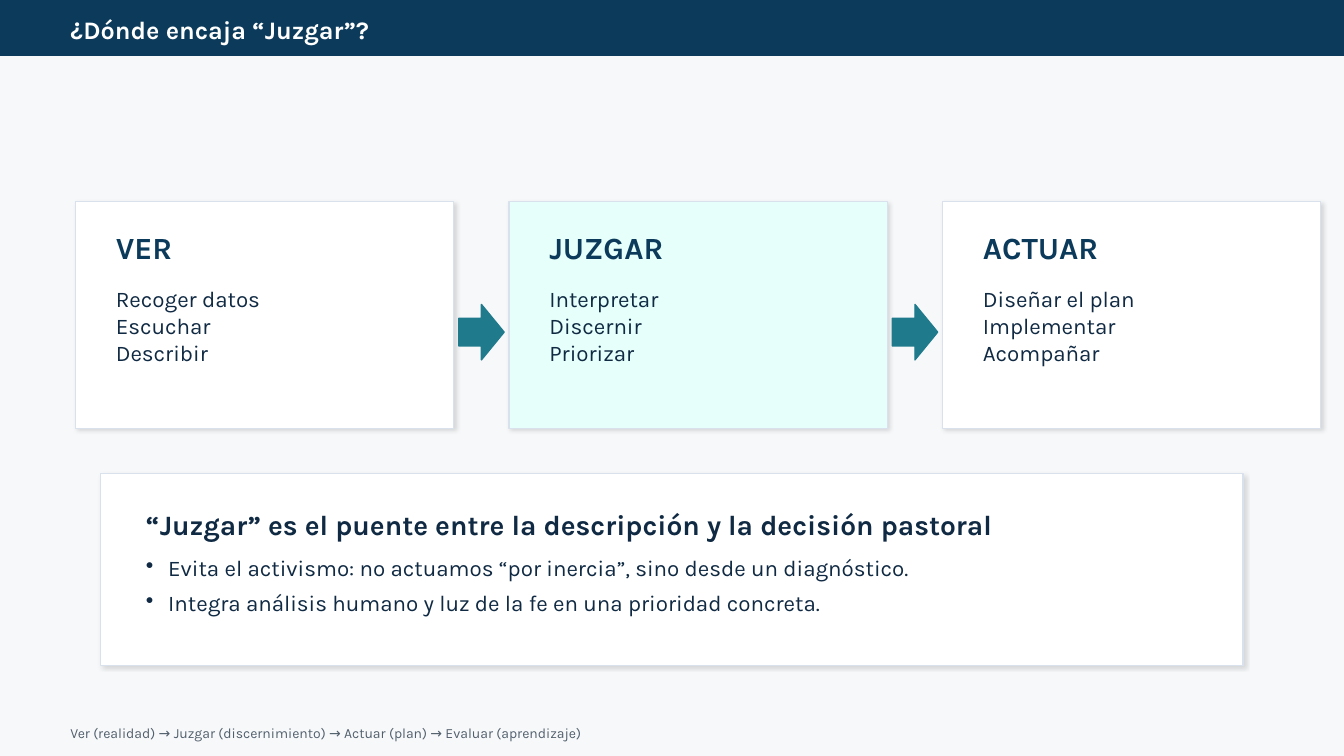
from lxml.etree import SubElement
from pptx import Presentation
from pptx.dml.color import RGBColor
from pptx.enum.shapes import MSO_SHAPE
from pptx.enum.text import MSO_ANCHOR
from pptx.oxml.ns import qn
from pptx.util import Inches, Pt

NAVY, INK, TEAL = "0B3A5B", "102A43", "1F7A8C"
WHITE, MINT, EDGE = "FFFFFF", "E6FFFA", "D9E2EC"

deck = Presentation()
deck.slide_width, deck.slide_height = Inches(13.33), Inches(7.5)
slide = deck.slides.add_slide(deck.slide_layouts[6])
slide.background.fill.solid()
slide.background.fill.fore_color.rgb = RGBColor.from_string("F7F8FA")


def draw(kind, area, fill, edge, shade=False):
    shape = slide.shapes.add_shape(kind, *map(Inches, area))
    shape.fill.solid()
    shape.fill.fore_color.rgb = RGBColor.from_string(fill)
    shape.line.color.rgb = RGBColor.from_string(edge)
    shape.line.width = Pt(1)
    shape.shadow.inherit = False
    if shade:
        glow = SubElement(shape._element.spPr.find(qn("a:effectLst")), qn("a:outerShdw"),
                          blurRad=str(Pt(3)), dist=str(Pt(1.5)), dir=str(45 * 60000),
                          algn="ctr", rotWithShape="0")
        tone = SubElement(glow, qn("a:srgbClr"), val="000000")
        SubElement(tone, qn("a:alpha"), val="12000")


def write(area, lines, size, color, bold=False, middle=True, dots=False):
    frame = slide.shapes.add_textbox(*map(Inches, area)).text_frame
    frame.word_wrap = True
    frame.vertical_anchor = MSO_ANCHOR.MIDDLE if middle else MSO_ANCHOR.TOP
    for i, line in enumerate(lines):
        para = frame.add_paragraph() if i else frame.paragraphs[0]
        if dots:
            para.space_after = Pt(6)
            props = para._p.get_or_add_pPr()
            props.set("marL", str(Inches(0.22)))
            props.set("indent", str(-Inches(0.22)))
            SubElement(props, qn("a:buChar"), char="•")
        run = para.add_run()
        run.text = line
        run.font.name = "Karla"
        run.font.size = Pt(size)
        run.font.bold = bold
        run.font.color.rgb = RGBColor.from_string(color)


draw(MSO_SHAPE.RECTANGLE, (0, 0, 13.33, 0.55), NAVY, NAVY)
write((0.6, 0.12, 12.2, 0.35), ["¿Dónde encaja “Juzgar”?"], 18, WHITE, bold=True)
write((0.6, 7.15, 12.2, 0.25),
      ["Ver (realidad) → Juzgar (discernimiento) → Actuar (plan) → Evaluar (aprendizaje)"],
      10, "52606D")

left, top, wide, high, gap = 0.75, 2, 3.75, 2.25, 0.55
steps = [
    ("VER", WHITE, ["Recoger datos", "Escuchar", "Describir"]),
    ("JUZGAR", MINT, ["Interpretar", "Discernir", "Priorizar"]),
    ("ACTUAR", WHITE, ["Diseñar el plan", "Implementar", "Acompañar"]),
]
for col, (name, fill, tasks) in enumerate(steps):
    x = left + col * (wide + gap)
    draw(MSO_SHAPE.RECTANGLE, (x, top, wide, high), fill, EDGE, shade=True)
    write((x + 0.3, top + 0.25, wide - 0.6, 0.4), [name], 22, NAVY, bold=True)
    write((x + 0.3, top + 0.78, wide - 0.6, 1.4), tasks, 16, INK, middle=False)
    if col:
        draw(MSO_SHAPE.RIGHT_ARROW, (x - gap + 0.05, top + 1.02, gap - 0.1, 0.55), TEAL, TEAL)

draw(MSO_SHAPE.RECTANGLE, (1, 4.7, 11.33, 1.9), WHITE, EDGE, shade=True)
write((1.35, 4.95, 10.7, 0.5),
      ["“Juzgar” es el puente entre la descripción y la decisión pastoral"], 20, INK, bold=True)
write((1.35, 5.45, 10.9, 1.05),
      ["Evita el activismo: no actuamos “por inercia”, sino desde un diagnóstico.",
       "Integra análisis humano y luz de la fe en una prioridad concreta."],
      16, INK, middle=False, dots=True)

deck.save("out.pptx")
